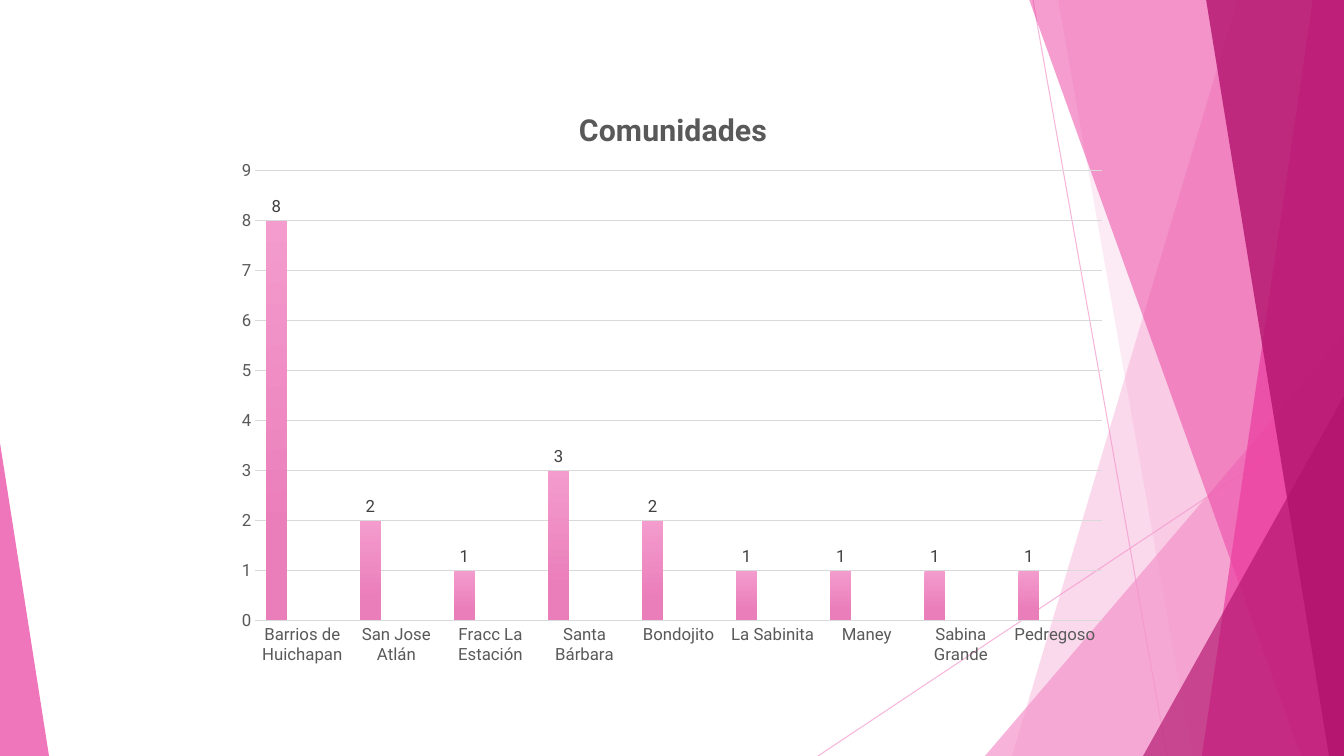
import lxml.etree
import pptx
import pptx.chart.data
import pptx.dml.color
import pptx.enum.chart
import pptx.enum.shapes
import pptx.oxml
import pptx.oxml.ns
import pptx.util

RGBColor = pptx.dml.color.RGBColor
WHITE = RGBColor(0xFF, 0xFF, 0xFF)
PALE_PINK = RGBColor(0xF4, 0x96, 0xCB)
PINK = RGBColor(0xEB, 0x3D, 0x9F)
MAGENTA = RGBColor(0xB2, 0x13, 0x6D)
AXIS_TEXT = RGBColor(0x59, 0x59, 0x59)
LABEL_TEXT = RGBColor(0x40, 0x40, 0x40)
GRID = RGBColor(0xD9, 0xD9, 0xD9)
SERIES_GRADIENTS = [
    (RGBColor(0xF4, 0x9C, 0xCD), RGBColor(0xEA, 0x7E, 0xBB)),
    (RGBColor(0xBF, 0x4E, 0x79), RGBColor(0xAC, 0x30, 0x66)),
    (RGBColor(0xE7, 0x63, 0x4C), RGBColor(0xDE, 0x45, 0x22)),
]
COMMUNITIES = {
    "Barrios de Huichapan": 8,
    "San Jose Atlán": 2,
    "Fracc La Estación": 1,
    "Santa Bárbara": 3,
    "Bondojito": 2,
    "La Sabinita": 1,
    "Maney": 1,
    "Sabina Grande": 1,
    "Pedregoso": 1,
}
WIDTH, HEIGHT = 1344, 756
EMU_PER_PX = 914400 / 100.8


def px(length):
    return pptx.util.Emu(round(length * EMU_PER_PX))


def format_font(font, size=12, color=AXIS_TEXT, bold=False, name="Roboto"):
    font.name = name
    font.size = pptx.util.Pt(size)
    font.bold = bold
    font.color.rgb = color


def write_text(frame, text, **font_format):
    span = frame.paragraphs[0].add_run()
    span.text = text
    format_font(span.font, **font_format)


def set_opacity(fill_parent, percent):
    color = fill_parent.find(".//" + pptx.oxml.ns.qn("a:srgbClr"))
    alpha = lxml.etree.SubElement(color, pptx.oxml.ns.qn("a:alpha"))
    alpha.set("val", str(percent * 1000))


def set_layout(parent, index, **fractions):
    for layout in parent.findall(pptx.oxml.ns.qn("c:layout")):
        parent.remove(layout)
    layout = lxml.etree.Element(pptx.oxml.ns.qn("c:layout"))
    manual = lxml.etree.SubElement(layout, pptx.oxml.ns.qn("c:manualLayout"))
    settings = {"xMode": "edge", "yMode": "edge", **fractions}
    if "w" in fractions:
        settings = {"layoutTarget": "inner", **settings}
    for tag, value in settings.items():
        lxml.etree.SubElement(manual, pptx.oxml.ns.qn("c:" + tag)).set("val", str(value))
    parent.insert(index, layout)


class SlideBuilder:
    def __init__(self, page):
        self.page = page
        page.background.fill.solid()
        page.background.fill.fore_color.rgb = WHITE

    def paint(self, shape, color, opacity):
        shape.shadow.inherit = False
        shape.fill.solid()
        shape.fill.fore_color.rgb = color
        shape.line.fill.background()
        set_opacity(shape._element.spPr, opacity)

    def line(self, start, end):
        line = self.page.shapes.add_connector(
            pptx.enum.shapes.MSO_CONNECTOR.STRAIGHT, *map(px, start + end))
        line.line.color.rgb = PALE_PINK
        line.line.width = pptx.util.Pt(0.75)
        properties = line._element.spPr
        set_opacity(properties, 70)
        lxml.etree.SubElement(properties, pptx.oxml.ns.qn("a:effectLst"))

    def right_band(self, top_x, bottom_x, color, opacity):
        outline = self.page.shapes.build_freeform(top_x, -1, scale=EMU_PER_PX)
        outline.add_line_segments([(WIDTH, -1), (WIDTH, HEIGHT), (bottom_x, HEIGHT)])
        self.paint(outline.convert_to_shape(), color, opacity)

    def corner(self, left, top, width, apex, color, opacity):
        triangle = self.page.shapes.add_shape(
            pptx.enum.shapes.MSO_SHAPE.ISOSCELES_TRIANGLE,
            px(left), px(top), px(width), px(HEIGHT - top))
        triangle.adjustments[0] = apex
        self.paint(triangle, color, opacity)

    def column_chart(self, title, values, left, top, width, height):
        data = pptx.chart.data.CategoryChartData()
        data.categories = list(values)
        data.add_series("Series 1", list(values.values()))
        for name in ("Series 2", "Series 3"):
            data.add_series(name, [None] * len(values))
        chart = self.page.shapes.add_chart(
            pptx.enum.chart.XL_CHART_TYPE.COLUMN_CLUSTERED,
            px(left), px(top), px(width), px(height), data).chart
        format_font(chart.font)
        chart.has_legend = False
        chart.has_title = True
        write_text(chart.chart_title.text_frame, title, size=21.6, bold=True)
        chart.chart_title.include_in_layout = False
        set_layout(chart.chart_title._element, 1, x=0.39, y=0.04)
        set_layout(chart._chartSpace.chart.plotArea, 0, x=0.035, y=0.152, w=0.945, h=0.752)
        self.format_axes(chart)
        self.format_series(chart.plots[0])

    def format_axes(self, chart):
        for axis in (chart.category_axis, chart.value_axis):
            axis.major_tick_mark = pptx.enum.chart.XL_TICK_MARK.NONE
            axis.minor_tick_mark = pptx.enum.chart.XL_TICK_MARK.NONE
            format_font(axis.tick_labels.font)
        chart.category_axis.format.line.color.rgb = GRID
        chart.category_axis.format.line.width = pptx.util.Pt(1)
        axis = chart.value_axis
        axis.minimum_scale, axis.maximum_scale, axis.major_unit = 0, 9, 1
        axis.format.line.fill.background()
        axis.major_gridlines.format.line.color.rgb = GRID
        axis.major_gridlines.format.line.width = pptx.util.Pt(0.75)

    def format_series(self, plot):
        plot.gap_width = 100
        plot.overlap = -24
        plot.vary_by_categories = False
        for series, colors in zip(plot.series, SERIES_GRADIENTS):
            fill = series.format.fill
            fill.gradient()
            fill.gradient_angle = 270
            for stop, color, position in zip(fill.gradient_stops, colors, (0, 0.78)):
                stop.color.rgb = color
                stop.position = position
            labels = series.data_labels
            labels.show_value = True
            labels.position = pptx.enum.chart.XL_LABEL_POSITION.OUTSIDE_END
            format_font(labels.font, color=LABEL_TEXT)


def main():
    deck = pptx.Presentation()
    deck.slide_width, deck.slide_height = px(WIDTH), px(HEIGHT)
    builder = SlideBuilder(deck.slides.add_slide(deck.slide_layouts[6]))
    builder.line((1033, 0), (1167, HEIGHT))
    builder.line((WIDTH, 406), (818, HEIGHT))
    builder.right_band(1238, 1012, PALE_PINK, 36)
    builder.right_band(1058, 1192, PALE_PINK, 20)
    builder.corner(985, 336, 359, 1, PALE_PINK, 72)
    builder.right_band(1029, 1301, PINK, 50)
    builder.right_band(1313, 1202, PINK, 70)
    builder.right_band(1206, 1329, MAGENTA, 80)
    builder.corner(1143, 396, 201, 1, MAGENTA, 66)
    builder.corner(0, 443, 49, 0, PINK, 70)
    builder.column_chart("Comunidades", COMMUNITIES, 224, 80, 896, 598)
    deck.save("out.pptx")


if __name__ == "__main__":
    main()
